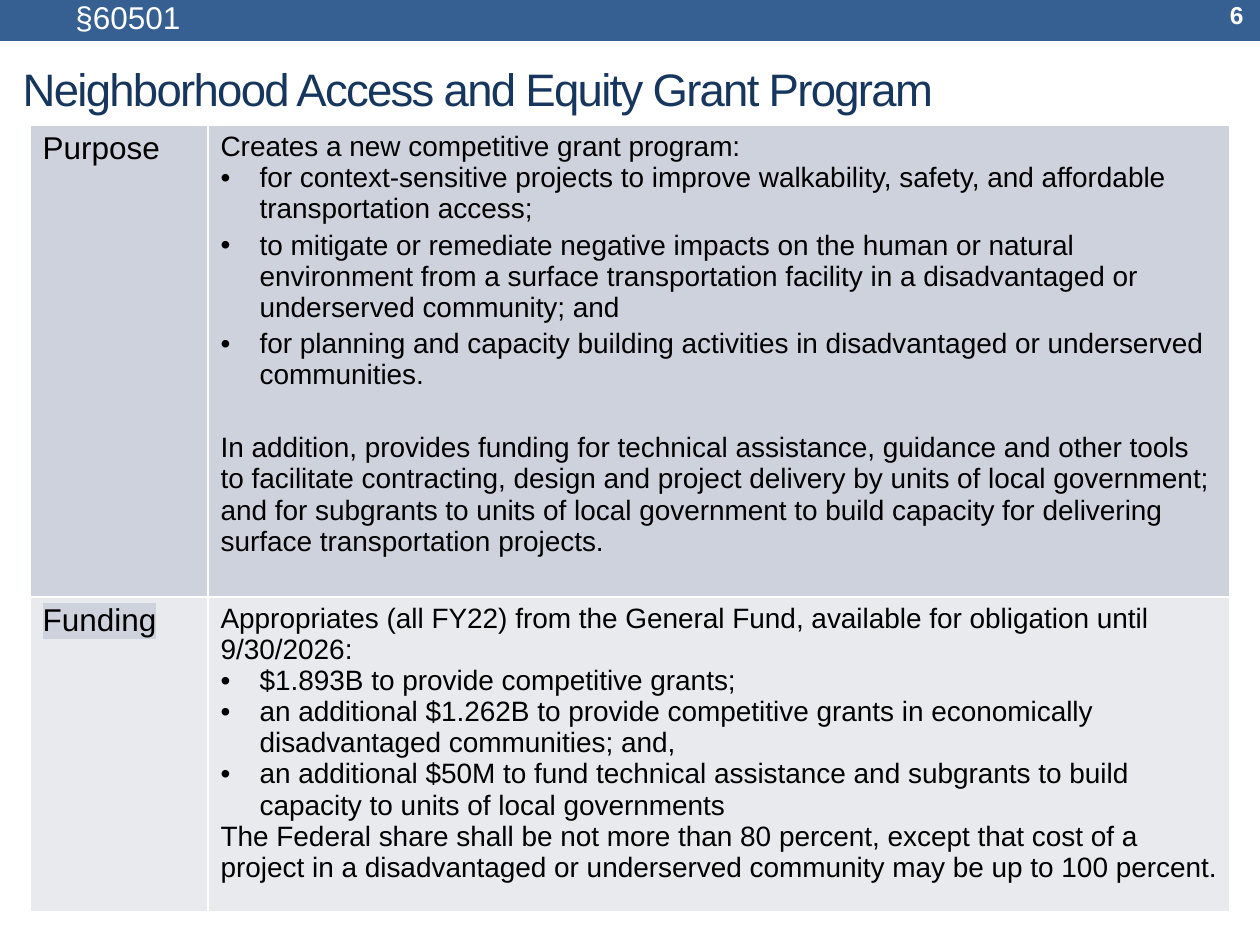
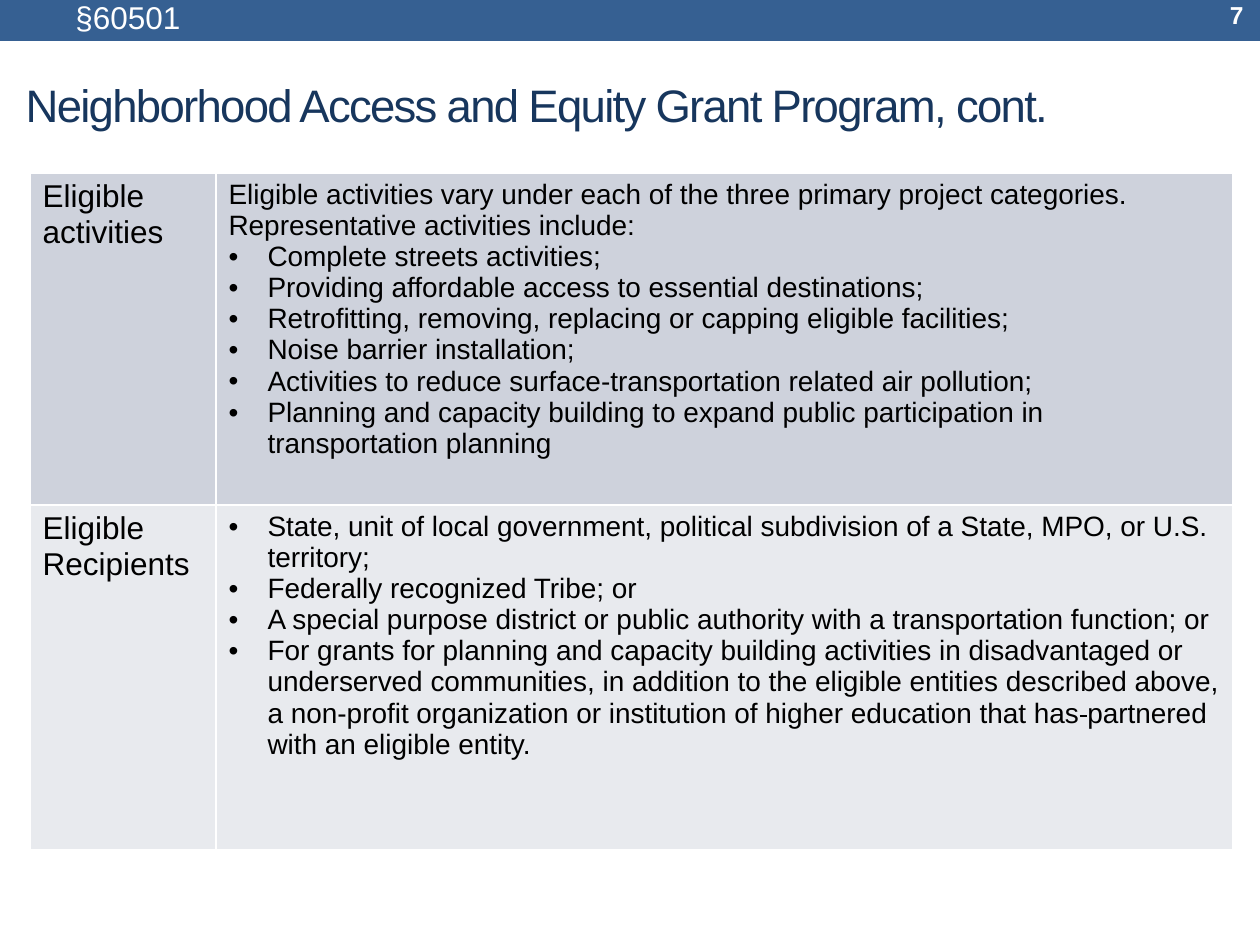
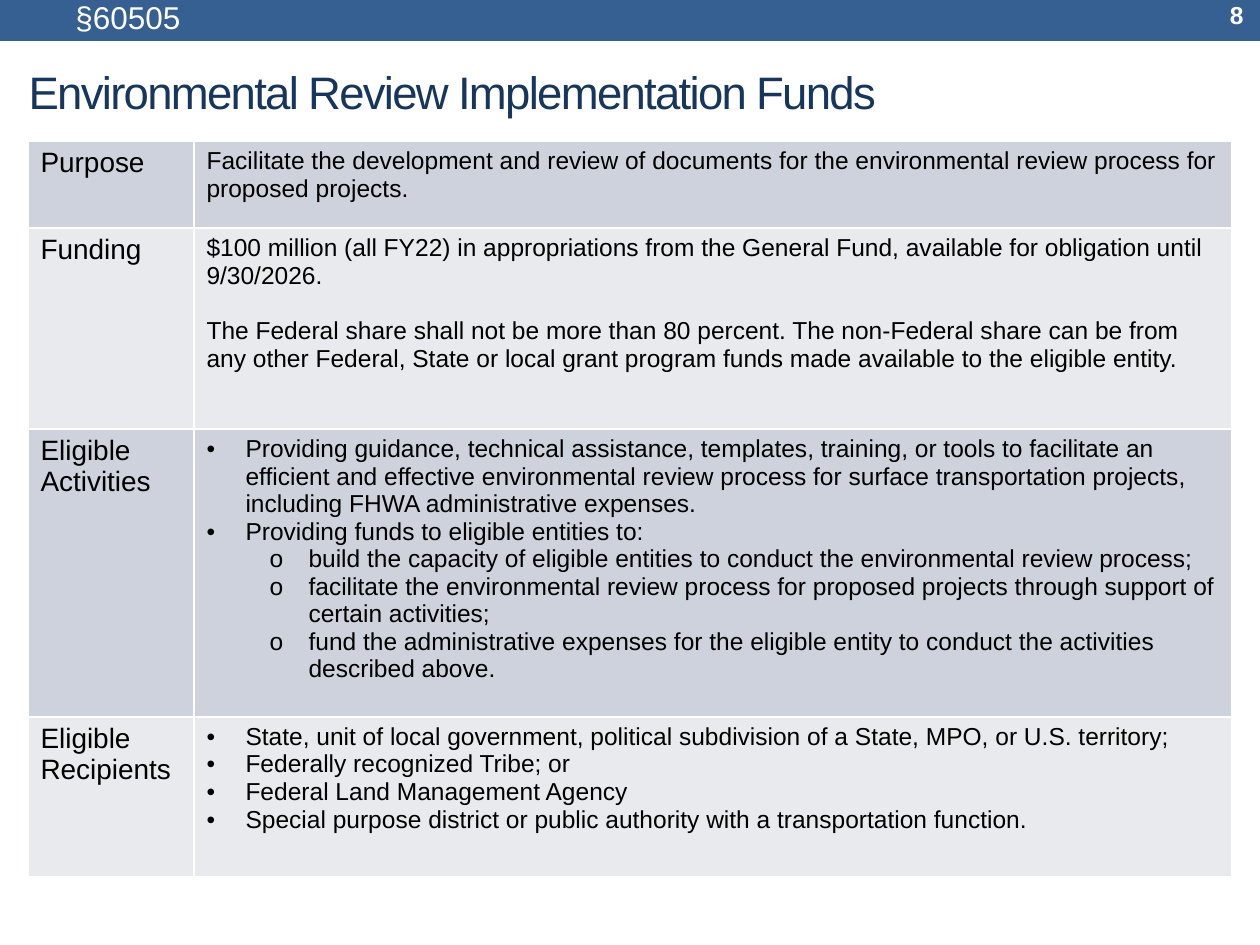
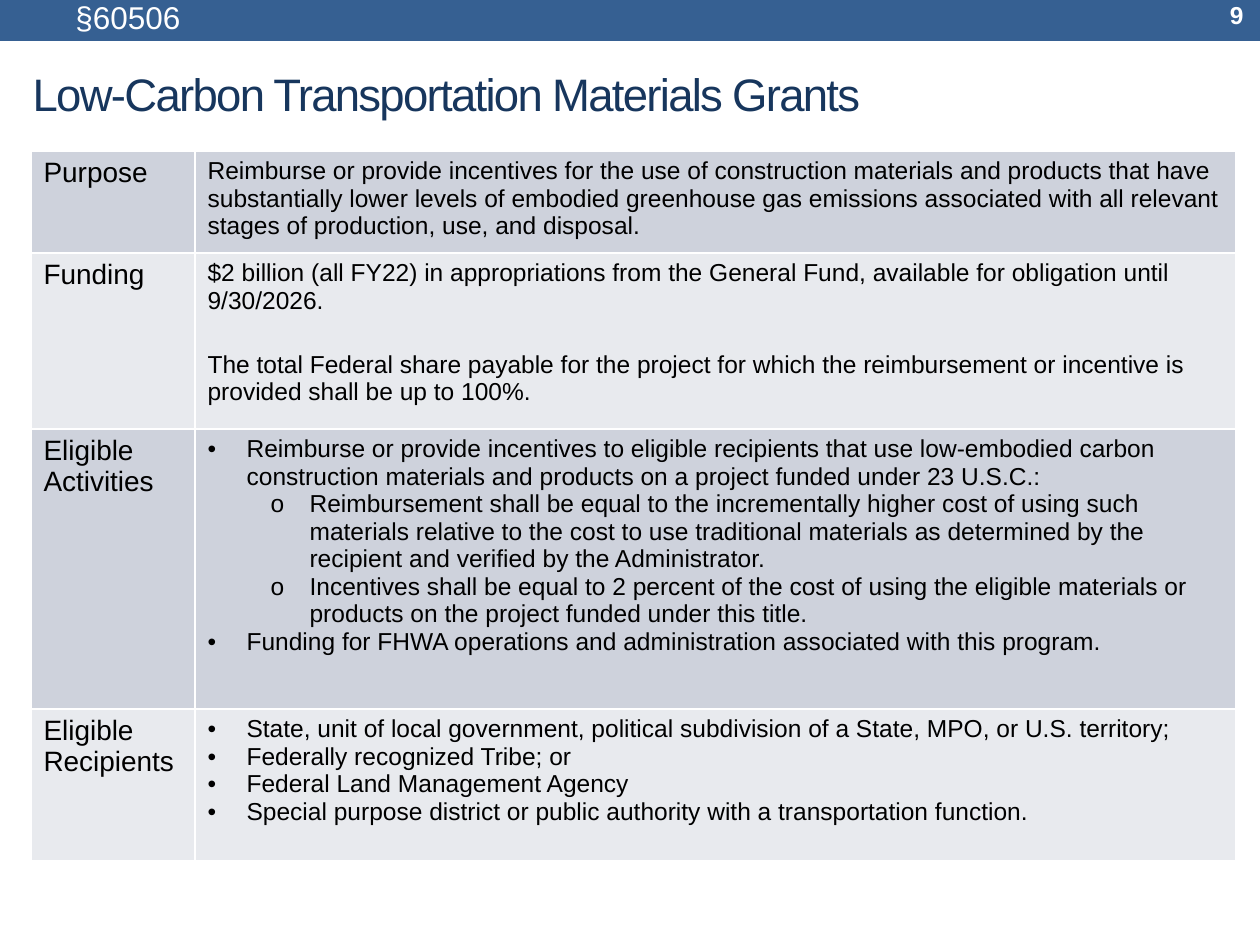
from dataclasses import dataclass
from itertools import cycle

from lxml.etree import SubElement
from pptx import Presentation
from pptx.dml.color import RGBColor
from pptx.enum.shapes import MSO_SHAPE
from pptx.enum.text import MSO_ANCHOR as Anchor, MSO_AUTO_SIZE as AutoSize, PP_ALIGN as Align
from pptx.oxml.ns import qn
from pptx.util import Emu, Pt

FONT = "Arial"
WHITE = RGBColor(0xFF, 0xFF, 0xFF)
BLACK = RGBColor(0x00, 0x00, 0x00)
BAND_BLUE = RGBColor(0x36, 0x60, 0x92)
TITLE_NAVY = RGBColor(0x17, 0x36, 0x5D)
ROW_DARK = RGBColor(0xCE, 0xD2, 0xDC)
ROW_LIGHT = RGBColor(0xE8, 0xEA, 0xEE)

PX_PER_INCH = 126
SLIDE_W, SLIDE_H = 1260, 945
HANGING = 39
MARK_INDENT = {"•": 39, "o": 102}


def px(length):
    return Emu(round(length * 914400 / PX_PER_INCH))


@dataclass
class Para:
    """One paragraph of a cell; text between ~ signs is struck through."""
    text: str
    mark: str = ""
    before: int = 0
    after: int = 0


def dot(text, after=0):
    return Para(text, "•", after=after)


def sub(text):
    return Para(text, "o")


class Deck:
    def __init__(self):
        self.prs = Presentation()
        self.prs.slide_width, self.prs.slide_height = px(SLIDE_W), px(SLIDE_H)
        self.slide = None

    def new_slide(self, section, number, title, title_box):
        self.slide = self.prs.slides.add_slide(self.prs.slide_layouts[5])
        self.band()
        self.label(section, (63, -8, 1051, 50), 18)
        self.title(title, title_box)
        self.label(str(number), (1109, -8, 147, 45), 14, bold=True,
                   align=Align.RIGHT, anchor=Anchor.MIDDLE)

    def style(self, run, size, color, bold=False):
        font = run.font
        font.name, font.size, font.bold = FONT, Pt(size), bold
        font.color.rgb = color

    def band(self):
        band = self.slide.shapes.add_shape(
            MSO_SHAPE.RECTANGLE, *map(px, (0, -9, SLIDE_W, 50)))
        band.shadow.inherit = False
        band.fill.solid()
        band.fill.fore_color.rgb = BAND_BLUE
        band.line.fill.background()

    def label(self, text, box, size, bold=False, align=Align.LEFT, anchor=Anchor.TOP):
        frame = self.slide.shapes.add_textbox(*map(px, box)).text_frame
        frame.word_wrap = True
        frame.vertical_anchor = anchor
        frame.text = text
        line = frame.paragraphs[0]
        line.alignment = align
        self.style(line.runs[0], size, WHITE, bold)

    def title(self, text, box):
        heading = self.slide.shapes.title
        heading.left, heading.top, heading.width, heading.height = map(px, box)
        frame = heading.text_frame
        frame.text = text
        frame.auto_size = AutoSize.NONE
        frame.vertical_anchor = Anchor.MIDDLE
        line = frame.paragraphs[0]
        line.alignment = Align.LEFT
        self.style(line.runs[0], 26, TITLE_NAVY)
        line.runs[0].font._element.set("spc", "-100")

    def table(self, corner, columns, heights, rows, sizes):
        """Rows are (label, paragraphs); sizes are for label and body."""
        box = (*corner, sum(columns), sum(heights))
        table = self.slide.shapes.add_table(len(rows), 2, *map(px, box)).table
        table.first_row = table.horz_banding = False
        for column, width in zip(table.columns, columns):
            column.width = px(width)
        fills = cycle((ROW_DARK, ROW_LIGHT))
        for row, height, (name, body), fill in zip(table.rows, heights, rows, fills):
            row.height = px(height)
            names = [Para(line) for line in name.split("\n")]
            for cell, paras, size in zip(row.cells, (names, body), sizes):
                self.borders(cell)
                cell.fill.solid()
                cell.fill.fore_color.rgb = fill
                self.paragraphs(cell.text_frame, paras, size)
        return table

    def paragraphs(self, frame, paras, size):
        frame.text = "\n".join(para.text.split("~")[0] for para in paras)
        for line, para in zip(frame.paragraphs, paras):
            for part in para.text.split("~")[1:]:
                line.add_run().text = part
            for run, struck in zip(line.runs, cycle((False, True))):
                self.style(run, size, BLACK)
                if struck:
                    run.font._element.set("strike", "sngStrike")
            line.space_before, line.space_after = Pt(para.before), Pt(para.after)
            if para.mark:
                self.bullet(line, para.mark)

    def bullet(self, line, mark):
        line.level = 1 if mark == "o" else 0
        props = line._p.get_or_add_pPr()
        props.set("marL", str(px(MARK_INDENT[mark])))
        props.set("indent", str(-px(HANGING)))
        SubElement(props, qn("a:buFont")).set("typeface", FONT)
        SubElement(props, qn("a:buChar")).set("char", mark)

    def borders(self, cell):
        props = cell._tc.get_or_add_tcPr()
        for side in ("a:lnL", "a:lnR", "a:lnT", "a:lnB"):
            edge = SubElement(props, qn(side), w=str(Pt(1)))
            fill = SubElement(edge, qn("a:solidFill"))
            SubElement(fill, qn("a:srgbClr")).set("val", str(WHITE))

    def highlight(self, cell, color):
        props = cell.text_frame.paragraphs[0].runs[0].font._element
        mark = SubElement(props, qn("a:highlight"))
        SubElement(mark, qn("a:srgbClr")).set("val", str(color))
        props.find(qn("a:solidFill")).addnext(mark)


# Recipients shared by the last two programs
RECIPIENTS = ("Eligible Recipients", [
    dot("State, unit of local government, political subdivision of a State, MPO, or U.S. territory;"),
    dot("Federally recognized Tribe; or"),
    dot("Federal Land Management Agency"),
    dot("Special purpose district or public authority with a transportation function."),
])


def access_program(deck):
    deck.new_slide("§60501", 6, "Neighborhood Access and Equity Grant Program",
                   (10, 27, 1250, 122))
    purpose = [
        Para("Creates a new competitive grant program:"),
        dot("for context-sensitive projects to improve walkability, safety, and affordable "
            "transportation access;", after=3),
        dot("to mitigate or remediate negative impacts on the human or natural environment from "
            "a surface transportation facility in a disadvantaged or underserved community; and",
            after=3),
        dot("for planning and capacity building activities in disadvantaged or underserved "
            "communities.", after=3),
        Para("In addition, provides funding for technical assistance, guidance and other tools to "
             "facilitate contracting, design and project delivery by units of local government; "
             "and for subgrants to units of local government to build capacity for delivering "
             "surface transportation projects.", before=21),
    ]
    funding = [
        Para("Appropriates (all FY22) from the General Fund, available for obligation until "
             "9/30/2026:"),
        dot("$1.893B to provide competitive grants;"),
        dot("an additional $1.262B to provide competitive grants in economically disadvantaged "
            "communities; and,"),
        dot("an additional $50M to fund technical assistance and subgrants to build capacity to "
            "units of local governments"),
        Para("The Federal share shall be not more than 80 percent, except that cost of a project "
             "in a disadvantaged or underserved community may be up to 100 percent."),
    ]
    overview = deck.table((30, 125), (178, 1022), (472, 292),
                          [("Purpose", purpose), ("Funding", funding)], (18, 16))
    deck.highlight(overview.cell(1, 0), ROW_DARK)


def access_program_continued(deck):
    deck.new_slide("§60501", 7, "Neighborhood Access and Equity Grant Program, cont.",
                   (13, 65, 1180, 79))
    activities = [
        Para("Eligible activities vary under each of the three primary project categories. "
             "Representative activities include:"),
        dot("Complete streets activities;"),
        dot("Providing affordable access to essential destinations;"),
        dot("Retrofitting, removing, replacing or capping eligible facilities;"),
        dot("Noise barrier installation;"),
        dot("Activities to reduce surface-transportation related air pollution;"),
        dot("Planning and capacity building to expand public participation in transportation "
            "planning"),
    ]
    recipients = [
        dot("State, unit of local government, political subdivision of a State, MPO, or U.S. "
            "territory;"),
        dot("Federally recognized Tribe; or"),
        dot("A special purpose district or public authority with a transportation function; or"),
        dot("For grants for planning and capacity building activities in disadvantaged or "
            "underserved communities, in addition to the eligible entities described above, a "
            "non-profit organization or institution of higher education that has~ ~partnered "
            "with an eligible entity."),
    ]
    deck.table((30, 173), (186, 1017), (332, 345),
               [("Eligible\nactivities", activities), ("Eligible Recipients", recipients)],
               (18, 16))


def environmental_review(deck):
    deck.new_slide("§60505", 8, "Environmental Review Implementation Funds",
                   (16, 30, 1180, 122))
    purpose = [
        Para("Facilitate the development and review of documents for the environmental review "
             "process for proposed projects."),
    ]
    funding = [
        Para("$100 million (all FY22) in appropriations from the General Fund, available for "
             "obligation until 9/30/2026."),
        Para("The Federal share shall not be more than 80 percent. The non-Federal share can be "
             "from any other Federal, State or local grant program funds made available to the "
             "eligible entity.", before=16),
    ]
    activities = [
        dot("Providing guidance, technical assistance, templates, training, or tools to "
            "facilitate an efficient and effective environmental review process for surface "
            "transportation projects, including FHWA administrative expenses."),
        dot("Providing funds to eligible entities to:"),
        sub("build the capacity of eligible entities to conduct the environmental review process;"),
        sub("facilitate the environmental review process for proposed projects through support "
            "of certain activities;"),
        sub("fund the administrative expenses for the eligible entity to conduct the activities "
            "described above."),
    ]
    deck.table((28, 141), (166, 1038), (87, 201, 288, 160),
               [("Purpose", purpose), ("Funding", funding),
                ("Eligible Activities", activities), RECIPIENTS], (16, 14))


def low_carbon_materials(deck):
    deck.new_slide("§60506", 9, "Low-Carbon Transportation Materials Grants",
                   (20, 32, 1240, 122))
    purpose = [
        Para("Reimburse or provide incentives for the use of construction materials and products "
             "that have substantially lower levels of embodied greenhouse gas emissions "
             "associated with all relevant stages of production, use, and disposal.", after=9),
    ]
    funding = [
        Para("$2 billion (all FY22) in appropriations from the General Fund, available for "
             "obligation until 9/30/2026.", after=3),
        Para("The total Federal share payable for the project for which the reimbursement or "
             "incentive is provided shall be up to 100%.", before=18, after=3),
    ]
    activities = [
        dot("Reimburse or provide incentives to eligible recipients that use low-embodied carbon "
            "construction materials and products on a project funded under 23 U.S.C.:"),
        sub("Reimbursement shall be equal to the incrementally higher cost of using such "
            "materials relative to the cost to use traditional materials as determined by the "
            "recipient and verified by the Administrator."),
        sub("Incentives shall be equal to 2 percent of the cost of using the eligible materials "
            "or products on the project funded under this title."),
        dot("Funding for FHWA operations and administration associated with this program."),
    ]
    deck.table((31, 151), (164, 1041), (102, 176, 280, 152),
               [("Purpose", purpose), ("Funding", funding),
                ("Eligible Activities", activities), RECIPIENTS], (16, 14))


def main():
    deck = Deck()
    access_program(deck)
    access_program_continued(deck)
    environmental_review(deck)
    low_carbon_materials(deck)
    deck.prs.save("out.pptx")


if __name__ == "__main__":
    main()
